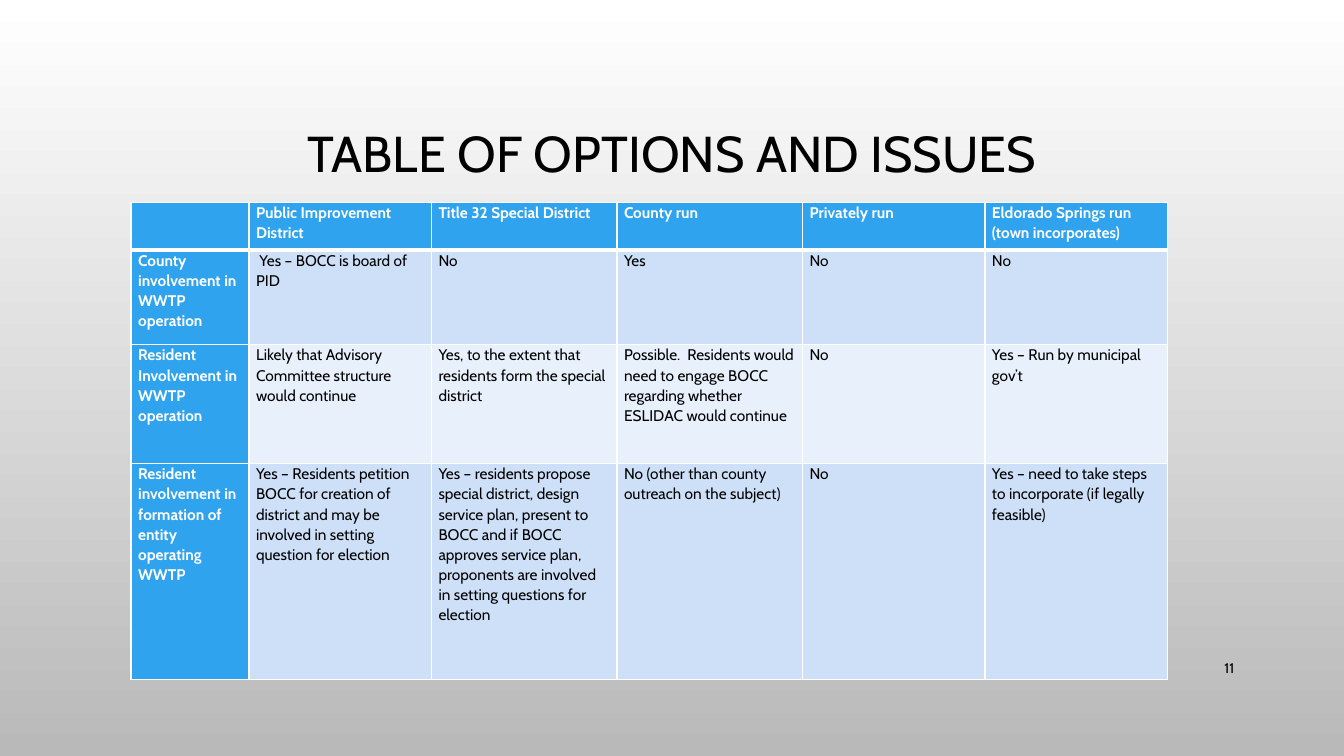
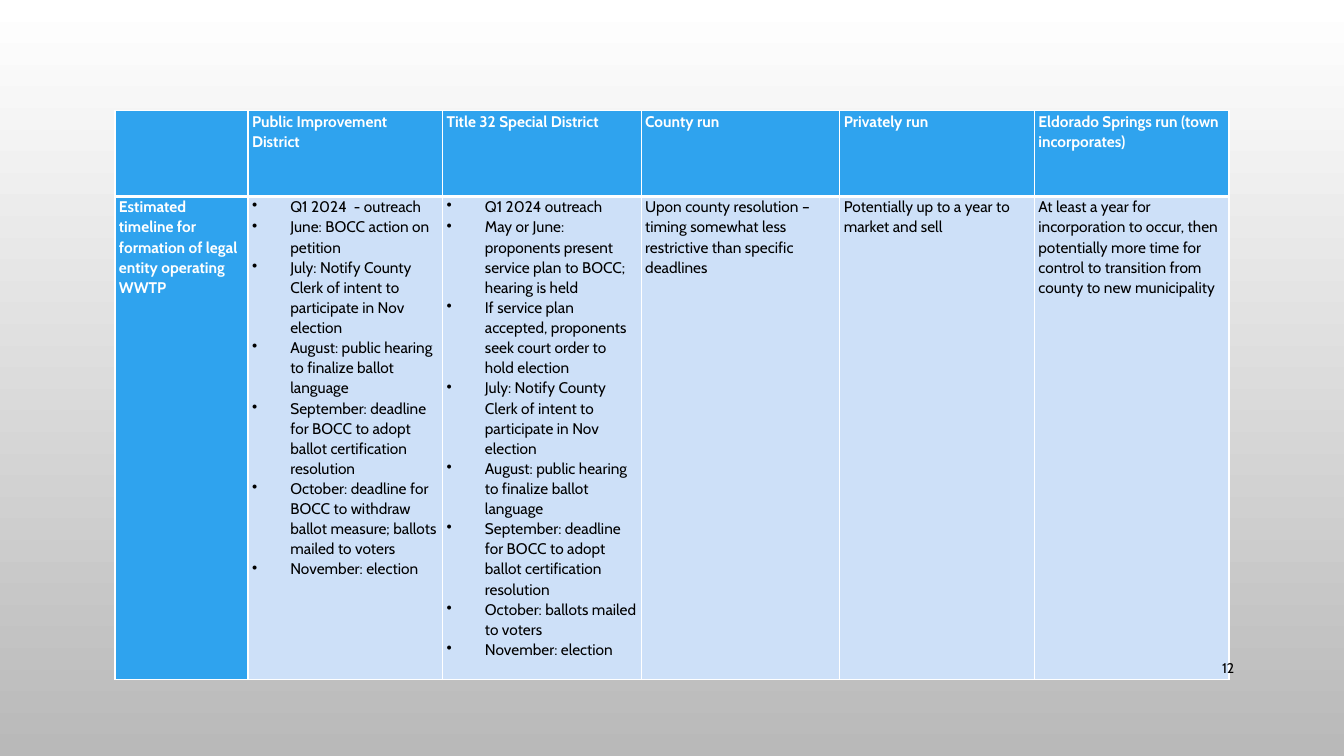
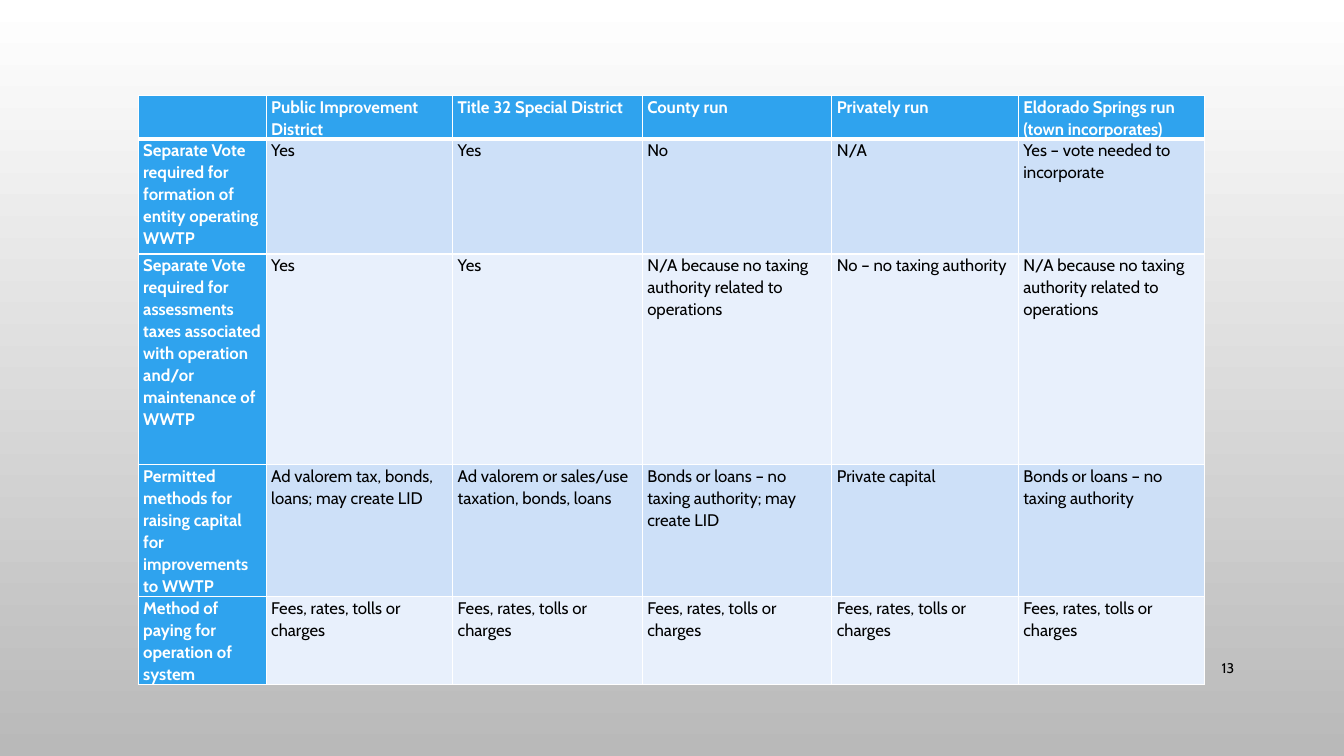
from lxml import etree
from pptx import Presentation
from pptx import util as u
from pptx.dml.color import RGBColor
from pptx.enum import text
from pptx.oxml.ns import qn

FONT = "Cabin"
BLUE, PALE, PALER = "2FA3EE", "CDE0F8", "E8F0FC"
BLACK, WHITE, GREY = "000000", "FFFFFF", "B9B9B9"
FIRST_NUMBER = 11


def colour(value):
    return RGBColor.from_string(value)


def write(frame, content, size=11, ink=BLACK, bold=False, align="LEFT", spacing=1.0, indent=0.38):
    lines = [content] if isinstance(content, str) else content
    for index, line in enumerate(lines):
        para = frame.paragraphs[0] if index == 0 else frame.add_paragraph()
        if lines is content:
            properties = para._p.get_or_add_pPr()
            properties.set("marL", str(u.Inches(indent)))
            properties.set("indent", str(-u.Inches(indent)))
            etree.SubElement(properties, qn("a:buChar"), char="•")
        para.alignment = getattr(text.PP_ALIGN, align)
        para.line_spacing = spacing
        span = para.add_run()
        span.text = line
        span.font.name = FONT
        span.font.size = u.Pt(size)
        span.font.bold = bold
        span.font.color.rgb = colour(ink)


HEADINGS = ["", "Public Improvement District", "Title 32 Special District", "County run",
            "Privately run", "Eldorado Springs run (town incorporates)"]

involvement = [
    ["County involvement in WWTP operation", " Yes – BOCC is board of PID", "No", "Yes", "No", "No"],
    ["Resident Involvement in WWTP operation",
     "Likely that Advisory Committee structure would continue",
     "Yes, to the extent that residents form the special district",
     "Possible.  Residents would need to engage BOCC regarding whether ESLIDAC would continue",
     "No",
     "Yes – Run by municipal gov’t"],
    ["Resident involvement in formation of entity operating WWTP",
     "Yes – Residents petition BOCC for creation of district and may be involved in setting "
     "question for election",
     "Yes – residents propose special district, design service plan, present to BOCC and if BOCC "
     "approves service plan, proponents are involved in setting questions for election",
     "No (other than county outreach on the subject)",
     "No",
     "Yes – need to take steps to incorporate (if legally feasible)"],
]

notify = "July: Notify County Clerk of intent to participate in Nov election"
hearing = "August: public hearing to finalize ballot language"
certify = "September: deadline for BOCC to adopt ballot certification resolution"
election = "November: election"

timeline = [
    ["Estimated timeline for formation of legal entity operating WWTP",
     ["Q1 2024  - outreach",
      "June: BOCC action on petition",
      notify, hearing, certify,
      "October: deadline for BOCC to withdraw ballot measure; ballots mailed to voters",
      election],
     ["Q1 2024 outreach",
      "May or June: proponents present service plan to BOCC; hearing is held",
      "If service plan accepted, proponents seek court order to hold election",
      notify, hearing, certify,
      "October: ballots mailed to voters",
      election],
     "Upon county resolution – timing somewhat less restrictive than specific deadlines",
     "Potentially up to a year to market and sell",
     "At least a year for incorporation to occur, then potentially more time for control to "
     "transition from county to new municipality"],
]

no_tax = "N/A because no taxing authority related to operations"
funding = [
    ["Separate Vote required for formation of entity operating WWTP",
     "Yes", "Yes", "No", "N/A", "Yes – vote needed to incorporate"],
    ["Separate Vote required for assessments taxes associated with operation and/or "
     "maintenance of WWTP",
     "Yes", "Yes", no_tax, "No – no taxing authority", no_tax],
    ["Permitted methods for raising capital for improvements  to WWTP",
     "Ad valorem tax, bonds, loans; may create LID",
     "Ad valorem or sales/use taxation, bonds, loans",
     "Bonds or loans – no taxing authority; may create LID",
     "Private capital",
     "Bonds or loans – no taxing authority"],
    ["Method of paying for operation of system"] + ["Fees, rates, tolls or charges"] * 5,
]

sheets = [
    dict(title="TABLE OF OPTIONS AND ISSUES", rows=involvement, left=1.3, top=2.01,
         label=1.17, narrow=1.81, wide=1.84, heights=[0.47, 0.94, 1.18, 2.14], inset=0.07, size=11),
    dict(title="", rows=timeline, left=1.14, top=1.1,
         label=1.32, narrow=1.93, wide=1.97, heights=[0.85, 4.79], inset=0.04, size=11),
    dict(title="", rows=funding, left=1.37, top=0.95,
         label=1.27, narrow=1.85, wide=1.88, heights=[0.43, 1.14, 2.09, 1.31, 0.87], inset=0.05, size=12),
]

deck = Presentation()
deck.slide_width, deck.slide_height = u.Inches(13.33), u.Inches(7.5)

backdrop = deck.slide_master.background.fill
backdrop.gradient()
backdrop.gradient_angle = 270
for stop, shade in zip(backdrop.gradient_stops, [WHITE, GREY]):
    stop.color.rgb = colour(shade)

for number, sheet in enumerate(sheets, FIRST_NUMBER):
    page = deck.slides.add_slide(deck.slide_layouts[6])
    labels = [
        (sheet["title"], (1, 0.68, 11.33, 1.74), dict(size=36, align="CENTER", spacing=0.9)),
        (str(number), (11.5, 6.43, 0.84, 0.4), dict(size=10, align="RIGHT")),
    ]

    narrow, wide = sheet["narrow"], sheet["wide"]
    widths = [sheet["label"], narrow, wide, wide, narrow, narrow]
    heights = sheet["heights"]
    area = [u.Inches(v) for v in (sheet["left"], sheet["top"], sum(widths), sum(heights))]
    table = page.shapes.add_table(len(heights), len(widths), *area).table
    table.first_row = table.horz_banding = False
    for column, width in zip(table.columns, widths):
        column.width = u.Inches(width)
    for row, height in zip(table.rows, heights):
        row.height = u.Inches(height)

    for r, contents in enumerate([HEADINGS] + sheet["rows"]):
        for c, content in enumerate(contents):
            cell = table.cell(r, c)
            heading = r == 0 or c == 0
            cell.margin_left = cell.margin_right = u.Inches(sheet["inset"])
            cell.margin_top = cell.margin_bottom = 0
            weights = dict(L=1, R=1, T=3 if r == 1 else 1, B=3 if r == 0 else 1)
            for side, weight in weights.items():
                edge = etree.SubElement(cell._tc.get_or_add_tcPr(), qn("a:ln" + side), w=str(u.Pt(weight)))
                paint = etree.SubElement(edge, qn("a:solidFill"))
                etree.SubElement(paint, qn("a:srgbClr"), val=WHITE)
            cell.fill.solid()
            cell.fill.fore_color.rgb = colour(BLUE if heading else PALE if r % 2 else PALER)
            if content:
                write(cell.text_frame, content, size=sheet["size"], bold=heading,
                      ink=WHITE if heading else BLACK, spacing=1.07)

    for label, place, style in labels:
        if label:
            box = page.shapes.add_textbox(*[u.Inches(v) for v in place])
            box.text_frame.word_wrap = True
            box.text_frame.vertical_anchor = text.MSO_ANCHOR.MIDDLE
            write(box.text_frame, label, **style)

deck.save("out.pptx")
